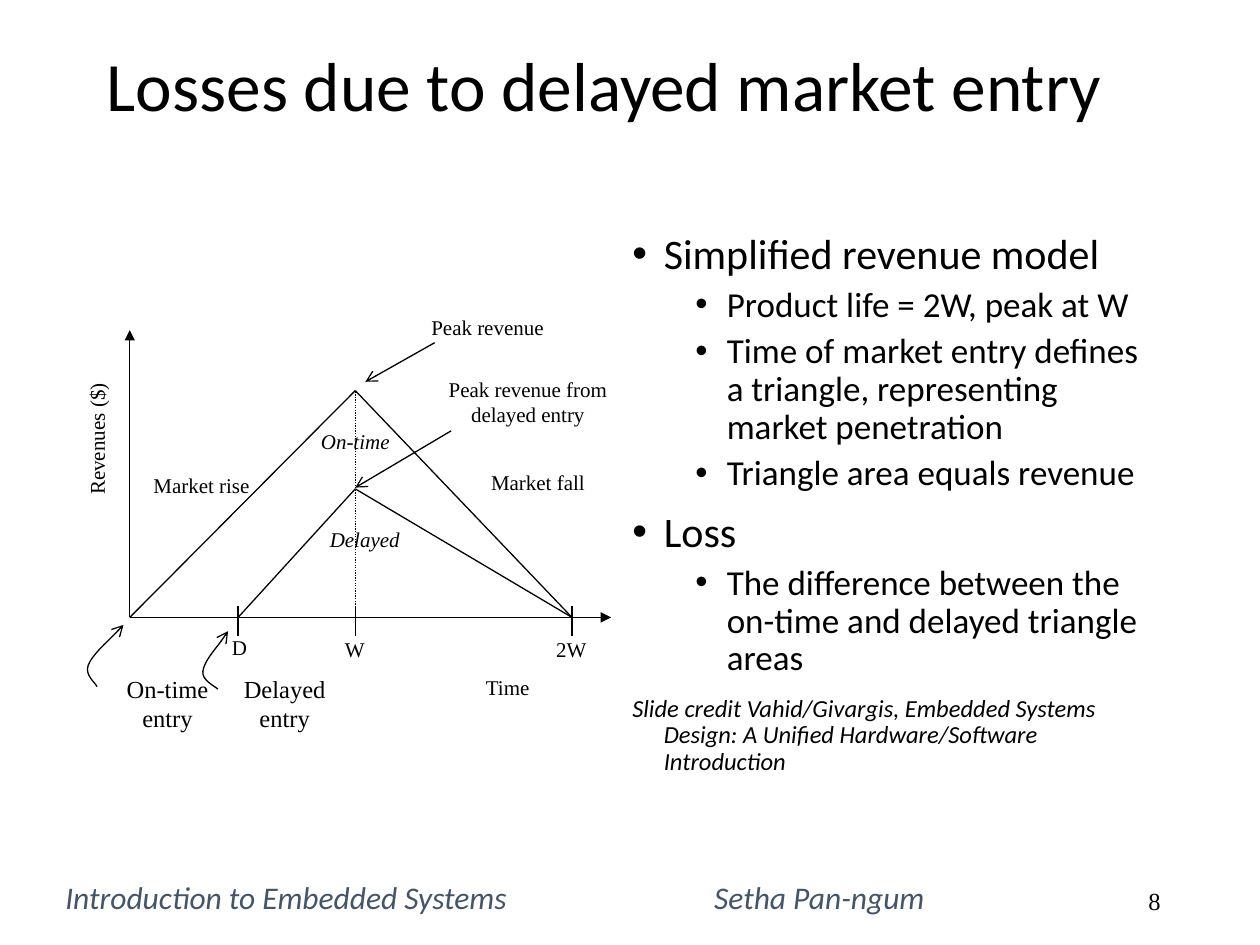
from lxml.etree import SubElement
from pptx import Presentation
from pptx.dml.color import RGBColor
from pptx.enum.dml import MSO_LINE
from pptx.enum.shapes import MSO_CONNECTOR
from pptx.enum.text import MSO_ANCHOR, PP_ALIGN
from pptx.oxml.ns import qn
from pptx.util import Inches, Pt

SERIF, SANS = "Times New Roman", "Calibri"
BLACK, SLATE = "000000", "44546A"
LEFT, AXIS, TOP = 1.03, 4.9, 2.62
D, W, W2 = 1.89, 2.82, 4.54
PEAK, DELAYED_PEAK = 3.1, 3.88

BODY = [
    (0, "Simplified revenue model"),
    (1, "Product life = 2W, peak at W"),
    (1, "Time of market entry defines a triangle, representing market penetration"),
    (1, "Triangle area equals revenue"),
    (0, "Loss"),
    (1, "The difference between the on-time and delayed triangle areas"),
]
CREDIT = ("Slide credit Vahid/Givargis, Embedded Systems Design: "
          "A Unified Hardware/Software Introduction")
LABELS = [
    ("Peak revenue", 3.05, 2.5, 1.64, 0.28),
    ("Peak revenue from delayed entry", 3.37, 2.99, 1.64, 0.54),
    ("Market rise", 1.17, 3.75, 0.86, 0.55),
    ("Market fall", 3.84, 3.73, 0.86, 0.55),
    ("D", 1.75, 5.04, 0.3, 0.24),
    ("W", 2.66, 5.05, 0.31, 0.31),
    ("2W", 4.38, 5.05, 0.31, 0.31),
    ("Time", 3.21, 5.35, 1.64, 0.31),
]


def color(value):
    return RGBColor.from_string(value)


def add_run(p, text, size, font, fill=BLACK, italic=False):
    r = p.add_run()
    r.text = text
    for name, value in {"size": Pt(size), "name": font, "italic": italic}.items():
        setattr(r.font, name, value)
    r.font.color.rgb = color(fill)


def add_box(s, x, y, w, h, inset=True, anchor=MSO_ANCHOR.TOP):
    sp = s.shapes.add_textbox(Inches(x), Inches(y), Inches(w), Inches(h))
    tf = sp.text_frame
    tf.word_wrap = True
    tf.vertical_anchor = anchor
    if not inset:
        for side in ("left", "top", "right", "bottom"):
            setattr(tf, f"margin_{side}", 0)
    return sp


def add_label(s, text, x, y, w, h, size=12, italic=False):
    """Centred chart label; each line of text is a paragraph."""
    sp = add_box(s, x, y, w, h, inset=False)
    tf = sp.text_frame
    for i, line in enumerate(text.split("\n")):
        p = tf.add_paragraph() if i else tf.paragraphs[0]
        p.alignment = PP_ALIGN.CENTER
        add_run(p, line, size, SERIF, italic=italic)
    return sp


def style_line(sp, head=None, dash=None):
    sp.line.color.rgb = color(BLACK)
    sp.line.width = Pt(0.75)
    if dash:
        sp.line.dash_style = dash
    if head:
        SubElement(sp.line._get_or_add_ln(), qn("a:tailEnd"), type=head)


def add_line(s, x1, y1, x2, y2, head=None, dash=None):
    cx = s.shapes.add_connector(MSO_CONNECTOR.STRAIGHT, *map(Inches, (x1, y1, x2, y2)))
    style_line(cx, head, dash)
    SubElement(cx._element.spPr, qn("a:effectLst"))


def add_curve(s, points):
    """Open arrow through cubic Bezier segments: a start, then three points each."""
    start, *rest = [(Inches(x), Inches(y)) for x, y in points]
    builder = s.shapes.build_freeform(*start)
    builder.add_line_segments(rest, close=False)
    sp = builder.convert_to_shape()
    outline = sp._element.find(".//" + qn("a:path"))
    steps = outline.findall(qn("a:lnTo"))
    for i in range(0, len(steps), 3):
        bezier = SubElement(outline, qn("a:cubicBezTo"))
        for step in steps[i:i + 3]:
            bezier.append(step[0])
            outline.remove(step)
    sp.fill.background()
    sp.shadow.inherit = False
    style_line(sp, "arrow")


def add_body_paragraph(tf, text, level, size, bullet=True, italic=False):
    p = tf.paragraphs[0] if not tf.text else tf.add_paragraph()
    p.level = level
    p.line_spacing = 0.9
    p.space_before = Pt(5 if level else 10)
    pPr = p._p.get_or_add_pPr()
    pPr.set("marL", str(Inches(0.25 + 0.5 * level)))
    pPr.set("indent", str(Inches(-0.25)))
    if bullet:
        SubElement(pPr, qn("a:buFont"), typeface="Arial")
        SubElement(pPr, qn("a:buChar"), char="•")
    add_run(p, text, size, SANS, italic=italic)


def add_body(s):
    tf = add_box(s, 4.92, 1.8, 4.33, 4.87).text_frame
    for level, text in BODY:
        add_body_paragraph(tf, text, level, 20 if level else 24)
    add_body_paragraph(tf, CREDIT, 0, 14, bullet=False, italic=True)


def add_revenue_diagram(s):
    add_line(s, LEFT, AXIS, 4.85, AXIS, "triangle")
    add_line(s, LEFT, AXIS, LEFT, TOP, "triangle")
    add_line(s, W, AXIS, W, PEAK, dash=MSO_LINE.ROUND_DOT)
    for start, peak in ((LEFT, PEAK), (D, DELAYED_PEAK)):
        add_line(s, start, AXIS, W, peak)
        add_line(s, W, peak, W2, AXIS)
    for x in (D, W, W2):
        add_line(s, x, 4.81, x, 5.05)
    add_line(s, 3.45, 2.72, 2.9, 3.03, "arrow")
    add_line(s, 3.58, 3.42, W, 3.87, "arrow")
    add_curve(s, [(0.77, 5.45), (0.76, 5.42), (0.67, 5.36), (0.7, 5.28),
                  (0.73, 5.2), (0.92, 5.03), (0.98, 4.96)])
    add_curve(s, [(1.73, 5.47), (1.71, 5.45), (1.6, 5.4), (1.61, 5.33),
                  (1.62, 5.25), (1.77, 5.08), (1.81, 5.01)])
    for label in LABELS:
        add_label(s, *label)
    add_label(s, "On-time", 2.43, 3.4, 0.78, 0.31, italic=True)
    add_label(s, "Delayed", 2.35, 4.18, 1.09, 0.31, italic=True)
    add_label(s, "On-time\nentry", 0.88, 5.35, 0.9, 0.5, size=14)
    add_label(s, "Delayed\nentry", 1.81, 5.35, 0.9, 0.5, size=14)
    add_label(s, "Revenues ($)", 0, 3.33, 1.64, 0.31).rotation = 270


def add_title(s):
    tf = add_box(s, 0.75, 0.25, 8.5, 0.92, anchor=MSO_ANCHOR.MIDDLE).text_frame
    p = tf.paragraphs[0]
    p.line_spacing = 0.9
    add_run(p, "Losses due to delayed market entry", 39.6, SANS)


def add_footer(s):
    for text, x, w in (("Introduction to Embedded Systems", 0.42, 4.5),
                       ("Setha Pan-ngum", 5.57, 2.5)):
        p = add_box(s, x, 6.92, w, 0.42).text_frame.paragraphs[0]
        add_run(p, text, 18, SANS, SLATE, italic=True)
    tf = add_box(s, 7.06, 6.95, 2.25, 0.4, anchor=MSO_ANCHOR.MIDDLE).text_frame
    tf.paragraphs[0].alignment = PP_ALIGN.RIGHT
    add_run(tf.paragraphs[0], "8", 14, SERIF)


def main():
    prs = Presentation()
    prs.slide_width, prs.slide_height = Inches(10), Inches(7.5)
    s = prs.slides.add_slide(prs.slide_layouts[6])
    add_title(s)
    add_body(s)
    add_revenue_diagram(s)
    add_footer(s)
    prs.save("out.pptx")


if __name__ == "__main__":
    main()
